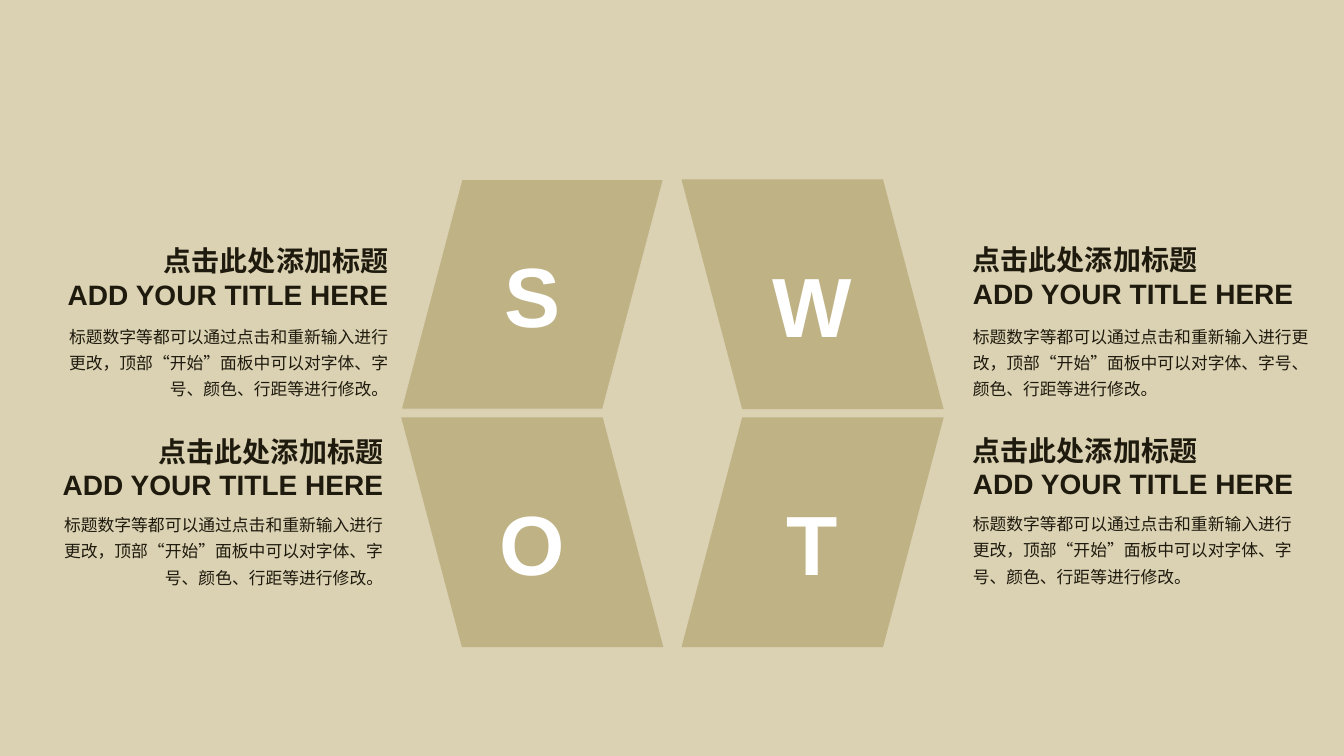
"""Build a SWOT slide of four slanted panels with a note beside each."""
from lxml import etree
from pptx import Presentation
from pptx.dml.color import RGBColor
from pptx.enum import shapes, text
from pptx.oxml.ns import qn
from pptx.util import Inches, Pt

HEAD = ["点击此处添加标题", "ADD YOUR TITLE HERE"]
BODY = ["标题数字等都可以通过点击和重新输入进行更改，"
        "顶部“开始”面板中可以对字体、字号、颜色、行距等进行修改。"]
HUE = {"back": "DBD1B3", "panel": "968440", "ink": "1E1A0D", "white": "FFFFFF"}
LEFT, RIGHT = text.PP_ALIGN.LEFT, text.PP_ALIGN.RIGHT

PANELS = [("S", 0, 0, 1.0), ("O", 0, 1, 1.2), ("W", 1, 0, 1.2), ("T", 1, 1, 1.2)]
WIDE, HIGH = 2.6, 2.28
COLS, ROWS = (3.98, 6.76), (1.78, 4.14)

NOTES = [
    (9.55, 3.75, 2.36, 3.61, 3.13, LEFT),
    (9.55, 3.75, 4.25, 3.47, 4.99, LEFT),
    (0.03, 3.92, 2.37, 3.45, 3.13, RIGHT),
    (0, 3.9, 4.26, 3.45, 5, RIGHT),
]


def rgb(name):
    return RGBColor.from_string(HUE[name])


def write(frame, lines, size, color="ink", bold=False, align=LEFT, space=None):
    frame.word_wrap = True
    for i, line in enumerate(lines):
        para = frame.paragraphs[0] if i == 0 else frame.add_paragraph()
        para.alignment = align
        para.line_spacing = space
        run = para.add_run()
        run.text = line
        font = run.font
        font.name, font.size, font.bold = "Arial", Pt(size), bold
        font.color.rgb = rgb(color)


def panel(slide, letter, col, row, space):
    shape = slide.shapes.add_shape(
        shapes.MSO_SHAPE.PARALLELOGRAM, Inches(COLS[col]), Inches(ROWS[row]),
        Inches(WIDE), Inches(HIGH))
    shape.adjustments[0] = 0.264
    shape.shadow.inherit = False
    shape.fill.solid()
    shape.fill.fore_color.rgb = rgb("panel")
    tint = shape.fill._xPr.find(".//" + qn("a:srgbClr"))
    etree.SubElement(tint, qn("a:alpha"), val="40000")
    if col != row:
        shape._element.spPr.find(qn("a:xfrm")).set("flipH", "1")
    if letter == "S":
        shape.line.color.rgb = rgb("back")
        shape.line.width = Pt(0.75)
    else:
        shape.line.fill.background()
    shape.text_frame.vertical_anchor = text.MSO_ANCHOR.MIDDLE
    write(shape.text_frame, [letter], 60, color="white", bold=True,
          align=text.PP_ALIGN.CENTER, space=space)


def note(slide, lines, left, top, wide, high, **look):
    box = slide.shapes.add_textbox(
        Inches(left), Inches(top), Inches(wide), Inches(high))
    write(box.text_frame, lines, **look)


def main():
    deck = Presentation()
    deck.slide_width, deck.slide_height = Inches(13.33), Inches(7.5)
    slide = deck.slides.add_slide(deck.slide_layouts[6])
    slide.background.fill.solid()
    slide.background.fill.fore_color.rgb = rgb("back")
    for item in PANELS:
        panel(slide, *item)
    for left, wide, top, span, below, align in NOTES:
        start = left if align == LEFT else left + wide - span
        note(slide, BODY, start, below, span, 0.89,
             size=12, align=align, space=1.3)
        note(slide, HEAD, left, top, wide, 0.77,
             size=20, bold=True, align=align)
    deck.save("out.pptx")


if __name__ == "__main__":
    main()
